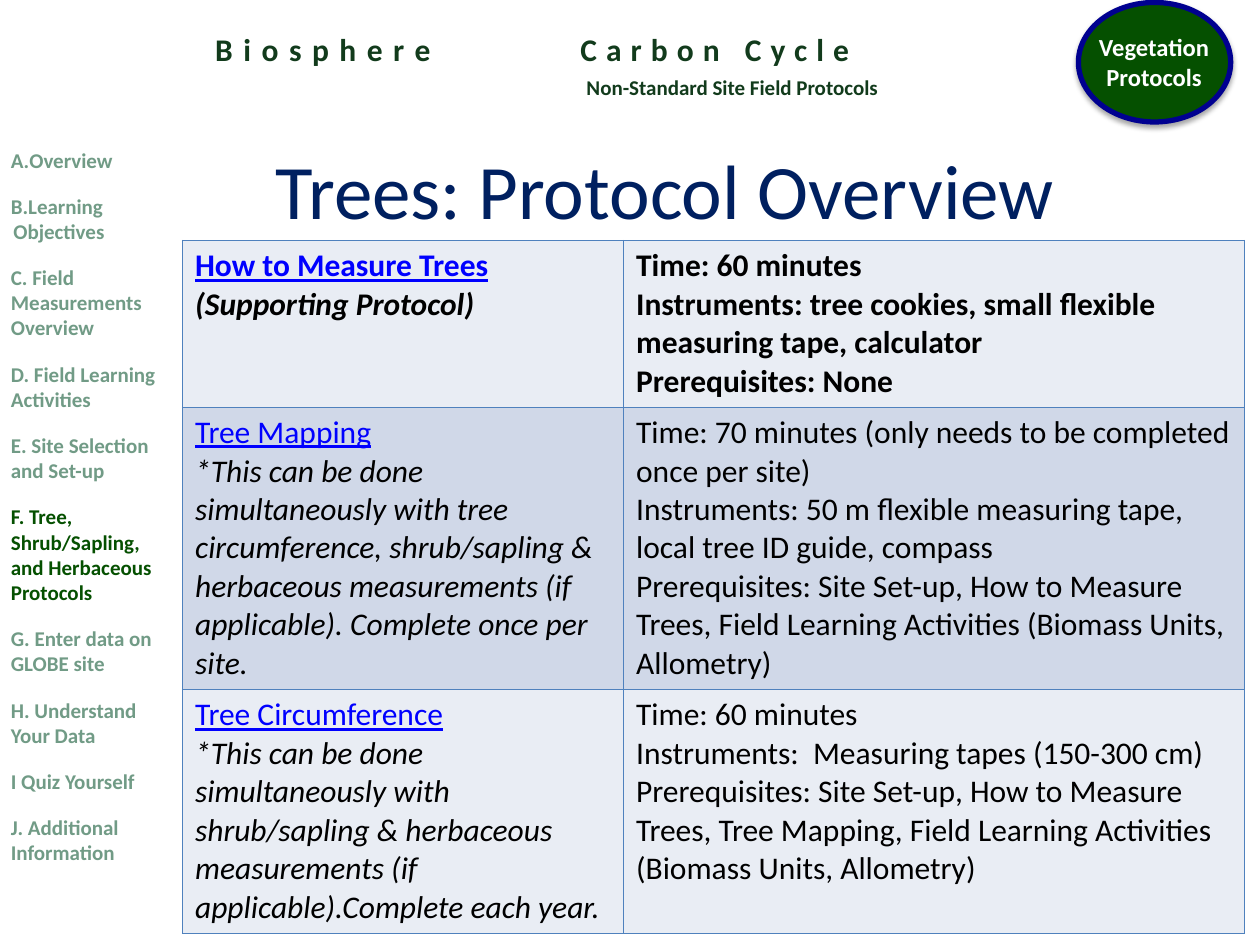
from lxml import etree
from pptx import Presentation
from pptx.dml.color import RGBColor
from pptx.enum.shapes import MSO_SHAPE
from pptx.enum.text import PP_ALIGN
from pptx.oxml.ns import qn
from pptx.util import Cm, Pt

OVAL = MSO_SHAPE.OVAL
LEFT, MID = PP_ALIGN.LEFT, PP_ALIGN.CENTER
FONT = "Calibri"
TITLE_ONLY = 5
HEX = {
    "head": "123B1C", "green": "055000", "navy": "000090", "white": "FFFFFF",
    "dim": "719B86", "title": "002060", "link": "0000FF", "ink": "000000",
    "edge": "4F81BD", "pale": "E9EDF4", "band": "D0D8E8",
}

MENU = [
    "Overview", "Learning Objectives", "C. Field Measurements Overview",
    "D. Field Learning Activities", "E. Site Selection and Set-up",
    "F. Tree, Shrub/Sapling, and Herbaceous Protocols",
    "G. Enter data on GLOBE site", "H. Understand Your Data",
    "I Quiz Yourself", "J. Additional Information",
]
NUMBERED, ACTIVE = 2, 5

# Each row: protocol name, note, then details
ROWS = [
    ("How to Measure Trees", "(Supporting Protocol)", [
        "Time: 60 minutes",
        "Instruments: tree cookies, small flexible measuring tape, calculator",
        "Prerequisites: None"]),
    ("Tree Mapping",
     "*This can be done simultaneously with tree circumference, shrub/sapling "
     "& herbaceous measurements (if applicable). Complete once per site.", [
         "Time: 70 minutes (only needs to be completed once per site)",
         "Instruments: 50 m flexible measuring tape, local tree ID guide, compass",
         "Prerequisites: Site Set-up, How to Measure Trees, Field Learning "
         "Activities (Biomass Units, Allometry)"]),
    ("Tree Circumference",
     "*This can be done simultaneously with shrub/sapling & herbaceous "
     "measurements (if applicable).Complete each year.", [
         "Time: 60 minutes",
         "Instruments:  Measuring tapes (150-300 cm)",
         "Prerequisites: Site Set-up, How to Measure Trees, Tree Mapping, "
         "Field Learning Activities (Biomass Units, Allometry)"]),
]


def rgb(name):
    return RGBColor.from_string(HEX[name])


def style(para, size, color, bold=False, italic=False, line=False):
    for run in para.runs:
        font = run.font
        font.name, font.size, font.bold = FONT, Pt(size), bold
        font.italic, font.underline = italic, line
        font.color.rgb = rgb(color)


def label(shapes, box, text, size, color, align=LEFT):
    item = shapes.add_textbox(*map(Cm, box))
    frame = item.text_frame
    frame.word_wrap = True
    frame.text = text
    for para in frame.paragraphs:
        para.alignment = align
        style(para, size, color, bold=True)
    return frame


def header(slide, box):
    x, y, w, h = box
    # Letter-spaced headings
    for text, dx, wide, gap in (("Biosphere", 0, 6, 600),
                                ("Carbon Cycle", 7.36, 7, 520)):
        frame = label(slide.shapes, (x + dx, y, wide, h), text, 18, "head")
        frame.paragraphs[0].runs[0].font._element.set("spc", str(gap))
    label(slide.shapes, (x + 4.39, y + 0.89, w, 0.76),
          "Non-Standard Site Field Protocols", 12, "head", MID)


def badge(slide, box):
    x, y, w, h = box
    group = slide.shapes.add_group_shape()
    oval = group.shapes.add_shape(OVAL, *map(Cm, box))
    oval.fill.solid()
    oval.fill.fore_color.rgb = rgb("green")
    oval.line.color.rgb = rgb("navy")
    oval.line.width = Pt(3)
    # Soft shadow below
    oval.shadow.inherit = False
    effect = oval._element.spPr.find(qn("a:effectLst"))
    shade = etree.SubElement(effect, qn("a:outerShdw"), blurRad=str(Pt(3.1)),
                             dist=str(Pt(1.8)), dir="5400000", rotWithShape="0")
    tone = etree.SubElement(shade, qn("a:srgbClr"), val=HEX["ink"])
    etree.SubElement(tone, qn("a:alpha"), val="35000")
    label(group.shapes, (x + 0.1, y + 0.48, w - 0.22, 1.45),
          "Vegetation Protocols", 14, "white", MID)


def sidebar(slide, box):
    frame = label(slide.shapes, box, "\n".join(MENU), 12, "dim")
    for i, para in enumerate(frame.paragraphs):
        para.space_after = Pt(12)
        if i < NUMBERED:
            props = para._p.get_or_add_pPr()
            props.set("marL", str(Cm(0.05)))
            props.set("indent", str(Cm(-0.05)))
            etree.SubElement(props, qn("a:buAutoNum"), type="alphaUcPeriod")
        if i == ACTIVE:
            style(para, 12, "green", bold=True)


def heading(slide, box):
    title = slide.shapes.title
    title.left, title.top, title.width, title.height = map(Cm, box)
    title.text_frame.text = "Trees: Protocol Overview"
    para = title.text_frame.paragraphs[0]
    para.alignment = MID
    style(para, 44, "title")


def paint(cell, fill):
    props = cell._tc.get_or_add_tcPr()
    for side in "LRTB":
        edge = etree.SubElement(props, qn("a:ln" + side), w=str(Pt(1)))
        ink = etree.SubElement(edge, qn("a:solidFill"))
        etree.SubElement(ink, qn("a:srgbClr"), val=HEX["edge"])
    cell.fill.solid()
    cell.fill.fore_color.rgb = rgb(fill)


def protocols(slide, box):
    grid = slide.shapes.add_table(len(ROWS), 2, *map(Cm, box)).table
    for col, wide in zip(grid.columns, (8.89, box[2] - 8.89)):
        col.width = Cm(wide)
    for row, tall in zip(grid.rows, (3.36, 5.69, 4.92)):
        row.height = Cm(tall)
    for i, (name, note, facts) in enumerate(ROWS):
        bold = i == 0
        left, right = grid.cell(i, 0), grid.cell(i, 1)
        for cell, lines in ((left, [name, note]), (right, facts)):
            paint(cell, "band" if i % 2 else "pale")
            cell.text_frame.text = "\n".join(lines)
            for para in cell.text_frame.paragraphs:
                style(para, 18, "ink", bold)
        top, low = left.text_frame.paragraphs
        style(top, 18, "link", bold, line=True)
        style(low, 18, "ink", bold, italic=True)


def main():
    deck = Presentation()
    deck.slide_width, deck.slide_height = Cm(25.4), Cm(19.05)
    slide = deck.slides.add_slide(deck.slide_layouts[TITLE_ONLY])
    header(slide, (4.09, 0.48, 12.57, 1.02))
    badge(slide, (21.74, 0.05, 3.07, 2.41))
    sidebar(slide, (-0.03, 2.84, 3.61, 14.88))
    heading(slide, (3.68, 2.72, 19.46, 2.16))
    protocols(slide, (3.68, 4.85, 21.41, 13.97))
    deck.save("out.pptx")


if __name__ == "__main__":
    main()
